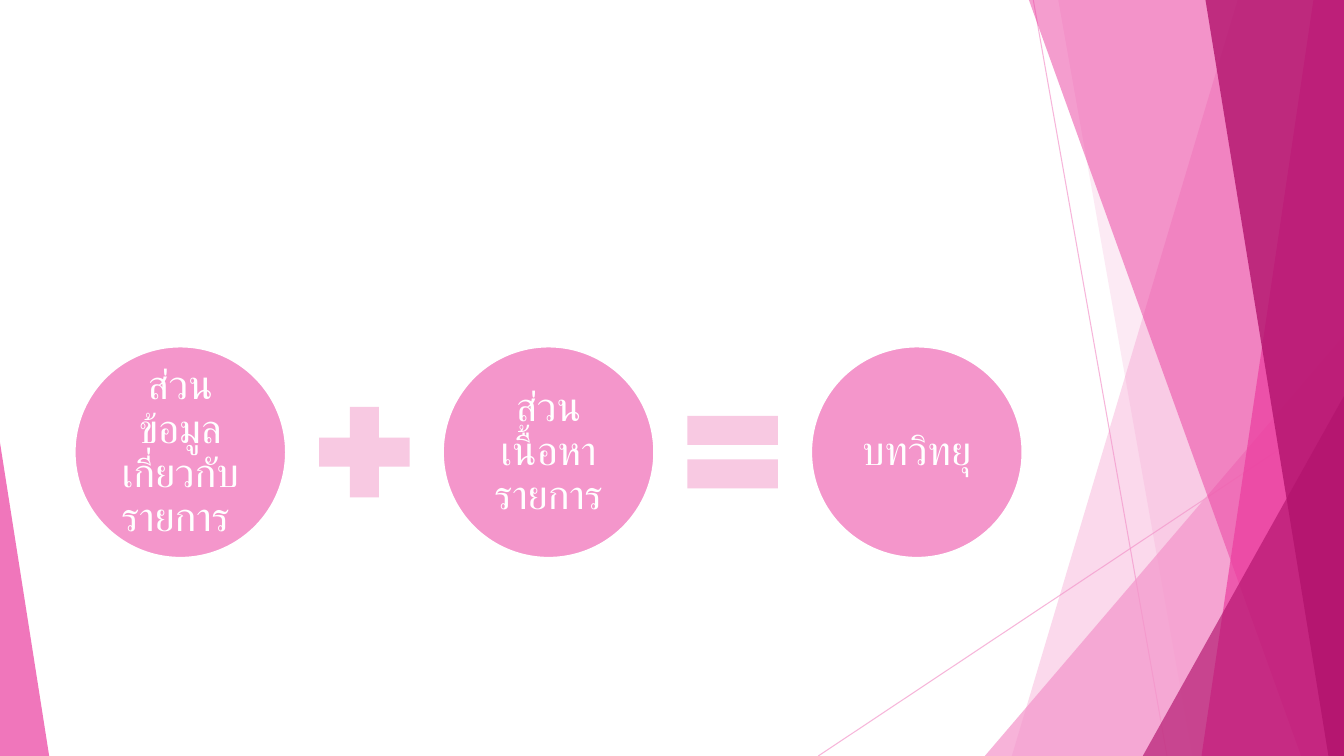
from lxml.etree import SubElement
from pptx import Presentation
from pptx.dml.color import RGBColor
from pptx.enum.lang import MSO_LANGUAGE_ID
from pptx.enum.shapes import MSO_CONNECTOR, MSO_SHAPE
from pptx.enum.text import MSO_ANCHOR, PP_ALIGN
from pptx.oxml.ns import qn
from pptx.util import Cm, Pt

PINK = RGBColor(0xF4, 0x96, 0xCB)
PALE_PINK = RGBColor(0xF8, 0xC9, 0xE2)
HOT_PINK = RGBColor(0xEB, 0x3D, 0x9F)
MAGENTA = RGBColor(0xB2, 0x13, 0x6D)
WHITE = RGBColor(0xFF, 0xFF, 0xFF)

FONT = "Karla"
WIDTH, HEIGHT = 33.87, 19.05  # centimetres, like every box below


def set_opacity(fill, percent):
    color = fill._xPr.find(qn("a:solidFill"))[0]
    SubElement(color, qn("a:alpha")).set("val", str(percent * 1000))


def paint(shape, color, opacity=100):
    shape.shadow.inherit = False
    shape.fill.solid()
    shape.fill.fore_color.rgb = color
    if opacity < 100:
        set_opacity(shape.fill, opacity)
    shape.line.fill.background()


def add_preset(page, kind, box, color, opacity=100):
    shape = page.shapes.add_shape(kind, *(Cm(length) for length in box))
    paint(shape, color, opacity)
    return shape


def add_ray(page, start, end):
    ray = page.shapes.add_connector(
        MSO_CONNECTOR.STRAIGHT, *(Cm(length) for length in start + end))
    ray.line.width = Pt(0.75)
    ray.line.color.rgb = PINK
    set_opacity(ray.line.fill, 70)
    SubElement(ray._element.spPr, qn("a:effectLst"))


def add_band(page, box, top_x, bottom_x, color, opacity):
    """Fill from a slanted left edge to the right side of the box."""
    left, top, width, height = box
    right, bottom = left + width, top + height
    corners = [(right, top), (right, bottom), (bottom_x, bottom)]
    builder = page.shapes.build_freeform(Cm(top_x), Cm(top))
    builder.add_line_segments([(Cm(x), Cm(y)) for x, y in corners], close=True)
    paint(builder.convert_to_shape(), color, opacity)


def add_corner(page, box, left, top, color, opacity):
    """Triangle filling the lower right corner of the box."""
    right, bottom = box[0] + box[2], box[1] + box[3]
    corner = add_preset(page, MSO_SHAPE.ISOSCELES_TRIANGLE,
                        (left, top, right - left, bottom - top), color, opacity)
    corner.adjustments[0] = 1


def write(shape, text, size, color, align=PP_ALIGN.CENTER, spacing=0.9, inset=0.1):
    frame = shape.text_frame
    frame.word_wrap = True
    frame.vertical_anchor = MSO_ANCHOR.MIDDLE
    frame.margin_left = frame.margin_right = Cm(inset)
    frame.margin_top = frame.margin_bottom = Cm(inset)
    para = frame.paragraphs[0]
    para.alignment = align
    para.line_spacing = spacing
    span = para.add_run()
    span.text = text
    span.font.name = FONT
    span.font.size = Pt(size)
    span.font.color.rgb = color
    span.font.language_id = MSO_LANGUAGE_ID.THAI
    # Thai letters take the complex-script font
    SubElement(span.font._element, qn("a:cs")).set("typeface", FONT)


def add_backdrop(page, box):
    left, top, width, height = box
    right, bottom = left + width, top + height

    # Thin rays
    add_ray(page, (26.04, top), (29.41, bottom))
    add_ray(page, (right, 10.24), (20.62, bottom))

    # Overlapping facets on the right, back to front
    add_band(page, box, 31.19, 25.5, PINK, 36)
    add_band(page, box, 26.67, 30.05, PINK, 20)
    add_corner(page, box, 24.82, 8.46, PINK, 72)
    add_band(page, box, 25.93, 32.79, HOT_PINK, 50)
    add_band(page, box, 33.1, 30.28, HOT_PINK, 70)
    add_band(page, box, 30.38, 33.48, MAGENTA, 80)
    add_corner(page, box, 28.8, 9.98, MAGENTA, 66)

    # Sliver in the lower left corner
    add_preset(page, MSO_SHAPE.RIGHT_TRIANGLE,
               (left, 11.15, 1.24, bottom - 11.15), HOT_PINK, 70)


def add_equation(page, box, terms, operators):
    left, top, width, diameter = box
    pitch = (width - diameter) / (len(terms) - 1)
    sign_size = 3.1

    # Circles with the terms
    for index, term in enumerate(terms):
        circle = add_preset(page, MSO_SHAPE.OVAL,
                            (left + index * pitch, top, diameter, diameter), PINK)
        circle.line.color.rgb = WHITE
        circle.line.width = Pt(1.5)
        write(circle, term, size=29, color=WHITE)

    # Signs centred in the gaps
    for index, operator in enumerate(operators):
        center = left + diameter / 2 + (index + 0.5) * pitch
        add_preset(page, operator,
                   (center - sign_size / 2, top + (diameter - sign_size) / 2,
                    sign_size, sign_size), PALE_PINK)


def main():
    deck = Presentation()
    deck.slide_width, deck.slide_height = Cm(WIDTH), Cm(HEIGHT)
    page = deck.slides.add_slide(deck.slide_layouts[6])
    add_backdrop(page, (0, 0, WIDTH, HEIGHT))
    add_equation(page, (1.88, 8.73, 23.89, 5.33),
                 ["ส่วนข้อมูลเกี่ยวกับรายการ ", "ส่วนเนื้อหารายการ", "บทวิทยุ"],
                 [MSO_SHAPE.MATH_PLUS, MSO_SHAPE.MATH_EQUAL])
    deck.save("out.pptx")


if __name__ == "__main__":
    main()
